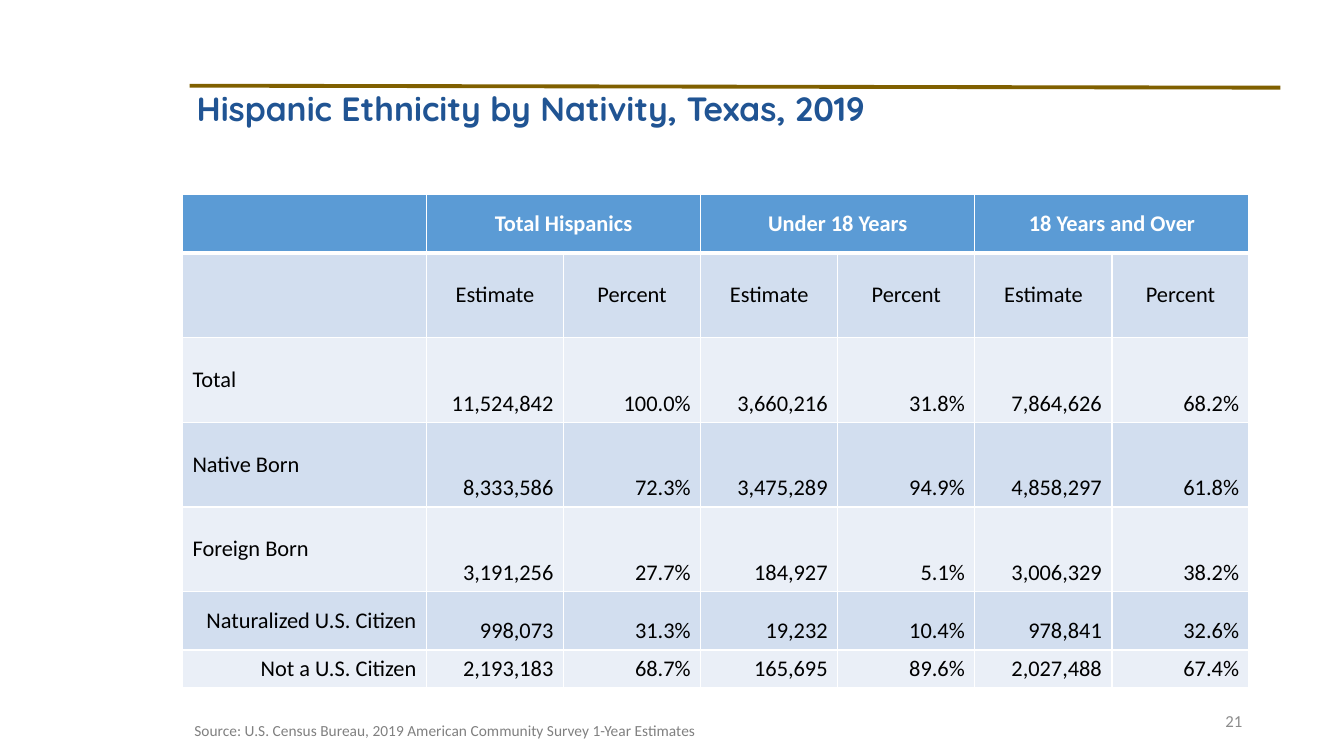
import pptx
import pptx.dml.color
import pptx.enum.shapes
import pptx.enum.text
import pptx.oxml
import pptx.oxml.ns
import pptx.util

Inches, Pt = pptx.util.Inches, pptx.util.Pt
ALIGN = pptx.enum.text.PP_ALIGN
ANCHOR = pptx.enum.text.MSO_ANCHOR

COLORS = {
    "rule": "806000",
    "title": "205493",
    "header": "5B9BD5",
    "band_dark": "D2DEEF",
    "band_light": "EAEFF7",
    "white": "FFFFFF",
    "black": "000000",
    "source": "808080",
    "number": "8C8C8C",
}
GROUPS = ["Total Hispanics", "Under 18 Years", "18 Years and Over"]
ROWS = [
    ["", *["Estimate", "Percent"] * len(GROUPS)],
    ["Total", "11,524,842", "100.0%", "3,660,216", "31.8%", "7,864,626", "68.2%"],
    ["Native Born", "8,333,586", "72.3%", "3,475,289", "94.9%", "4,858,297", "61.8%"],
    ["Foreign Born", "3,191,256", "27.7%", "184,927", "5.1%", "3,006,329", "38.2%"],
    ["Naturalized U.S. Citizen", "998,073", "31.3%", "19,232", "10.4%", "978,841", "32.6%"],
    ["Not a U.S. Citizen", "2,193,183", "68.7%", "165,695", "89.6%", "2,027,488", "67.4%"],
]
SUBGROUPS = ("Naturalized U.S. Citizen", "Not a U.S. Citizen")
COL_WIDTHS = [2.42] + [1.36] * 6
ROW_HEIGHTS = [0.58] + [0.84] * 4 + [0.58, 0.37]


def rgb(name):
    return pptx.dml.color.RGBColor.from_string(COLORS[name])


def style(p, size, color, font="Calibri", bold=False, align=ALIGN.LEFT):
    p.alignment = align
    p.font.size = Pt(size)
    p.font.name = font
    p.font.bold = bold
    p.font.color.rgb = rgb(color)


def add_rule(slide, x1, y1, x2, y2):
    line = slide.shapes.add_connector(
        pptx.enum.shapes.MSO_CONNECTOR.STRAIGHT,
        Inches(x1), Inches(y1), Inches(x2), Inches(y2))
    line.line.color.rgb = rgb("rule")
    line.line.width = Pt(2.75)
    line._element.spPr.append(pptx.oxml.parse_xml(
        f"<a:effectLst {pptx.oxml.ns.nsdecls('a')}/>"))


def set_title(slide, text, x, y, w, h):
    sp = slide.shapes.title
    sp.left, sp.top, sp.width, sp.height = map(Inches, (x, y, w, h))
    tf = sp.text_frame
    tf.text = text
    tf.word_wrap = True
    tf.auto_size = pptx.enum.text.MSO_AUTO_SIZE.NONE
    tf.vertical_anchor = ANCHOR.TOP
    p = tf.paragraphs[0]
    p.line_spacing = 0.9
    style(p, 24, "title", "Quicksand", bold=True)


def add_text(slide, text, x, y, w, h, size, color, align=ALIGN.LEFT,
             anchor=ANCHOR.TOP, wrap=True):
    tf = slide.shapes.add_textbox(*map(Inches, (x, y, w, h))).text_frame
    tf.text = text
    tf.word_wrap = wrap
    tf.vertical_anchor = anchor
    style(tf.paragraphs[0], size, color, align=align)


def set_borders(cell, top, bottom):
    """Draw white cell borders: 1 pt at the sides, given widths above and below."""
    tcPr = cell._tc.get_or_add_tcPr()
    for side, width in (("L", 1), ("R", 1), ("T", top), ("B", bottom)):
        tcPr.append(pptx.oxml.parse_xml(
            f"<a:ln{side} {pptx.oxml.ns.nsdecls('a')} w='{Pt(width)}'><a:solidFill>"
            f"<a:srgbClr val='{COLORS['white']}'/></a:solidFill></a:ln{side}>"))


def cell_layout(row, col, label):
    """Return the alignment and anchor of a cell."""
    if row < 2:
        return ALIGN.CENTER, ANCHOR.MIDDLE
    if col:
        return ALIGN.RIGHT, ANCHOR.BOTTOM
    return (ALIGN.RIGHT if label in SUBGROUPS else ALIGN.LEFT), ANCHOR.MIDDLE


def add_nativity_table(slide, x, y):
    header = [""]
    for group in GROUPS:
        header += [group, ""]
    data = [header, *ROWS]
    table = slide.shapes.add_table(
        len(data), len(header), Inches(x), Inches(y),
        Inches(sum(COL_WIDTHS)), Inches(sum(ROW_HEIGHTS))).table
    for column, width in zip(table.columns, COL_WIDTHS):
        column.width = Inches(width)
    for row, height in zip(table.rows, ROW_HEIGHTS):
        row.height = Inches(height)
    for i, values in enumerate(data):
        fill = "header" if i == 0 else "band_dark" if i % 2 else "band_light"
        for j, value in enumerate(values):
            cell = table.cell(i, j)
            set_borders(cell, top=3 if i == 1 else 1, bottom=3 if i == 0 else 1)
            cell.fill.solid()
            cell.fill.fore_color.rgb = rgb(fill)
            align, cell.vertical_anchor = cell_layout(i, j, value)
            cell.text = value
            style(cell.text_frame.paragraphs[0], 16,
                  "black" if i else "white", bold=i == 0, align=align)
    for j in range(1, len(header), 2):
        table.cell(0, j).merge(table.cell(0, j + 1))


def add_footer(slide, x, y):
    add_text(slide, "21", x + 7.59, y, 3, 0.4, 12, "number",
             ALIGN.RIGHT, ANCHOR.MIDDLE)
    add_text(slide, "Source: U.S. Census Bureau, 2019 American Community Survey 1-Year Estimates",
             x, y + 0.15, 5.24, 0.29, 11, "source", wrap=False)


def main():
    prs = pptx.Presentation()
    prs.slide_width, prs.slide_height = Inches(13.33), Inches(7.5)
    slide = prs.slides.add_slide(prs.slide_layouts[5])
    add_rule(slide, 1.88, 0.85, 12.7, 0.87)
    set_title(slide, "Hispanic Ethnicity by Nativity, Texas, 2019", 1.85, 0.87, 10.82, 0.9)
    add_nativity_table(slide, 1.81, 1.93)
    add_footer(slide, 1.83, 6.95)
    prs.save("out.pptx")


if __name__ == "__main__":
    main()
